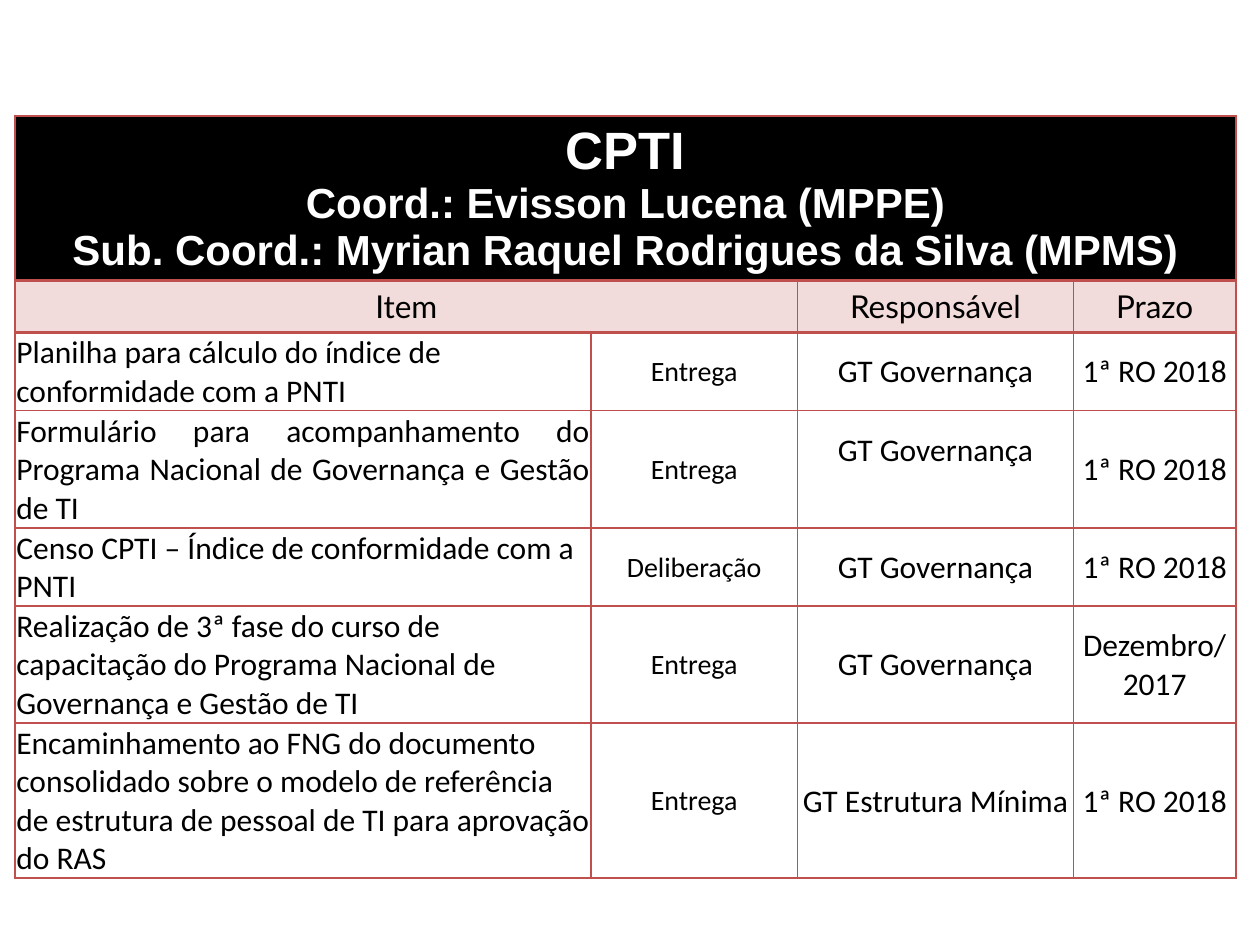
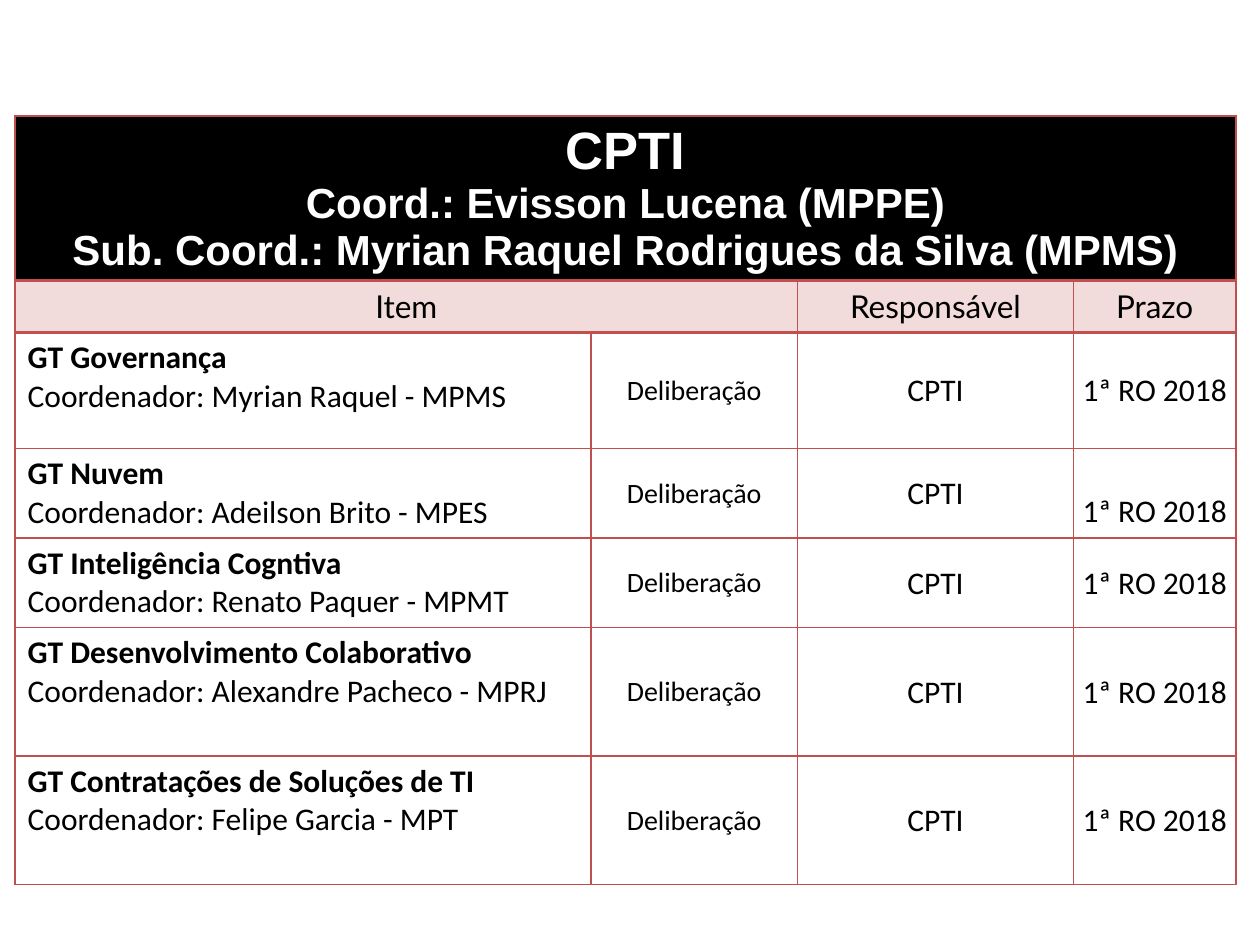
from lxml.etree import SubElement
from pptx import Presentation
from pptx.dml.color import RGBColor
from pptx.enum.text import MSO_ANCHOR, PP_ALIGN
from pptx.oxml.ns import qn
from pptx.util import Inches, Pt

BLACK, WHITE, RED, PINK = "000000", "FFFFFF", "C0504D", "F2DCDB"
COLUMNS = [4.57, 1.64, 2.19, 1.29]
TITLE_HEIGHT, HEADING_HEIGHT = 1.3, 0.41
LEFT, TOP = 0.12, 0.92
TIGHT, LINE = 0.01, 0.3
FIRST_MEETING = "1ª RO 2018"

title_lines = [
    ("CPTI", 30, True),
    ("Coord.: Evisson Lucena (MPPE)", 24, True),
    ("Sub. Coord.: Myrian Raquel Rodrigues da Silva (MPMS)", 24, True),
]
headings = {0: "Item", 2: "Responsável", 3: "Prazo"}

deliveries = [
    (0.62, ["Planilha para cálculo do índice de conformidade com a PNTI"],
     "Entrega", "GT Governança", FIRST_MEETING),
    (0.93, ["Formulário para acompanhamento do Programa Nacional de Governança e Gestão de TI"],
     "Entrega", "GT Governança", FIRST_MEETING),
    (0.62, ["Censo CPTI – Índice de conformidade com a PNTI"],
     "Deliberação", "GT Governança", FIRST_MEETING),
    (0.93, ["Realização de 3ª fase do curso de capacitação do Programa Nacional de Governança e Gestão de TI"],
     "Entrega", "GT Governança", "Dezembro/2017"),
    (1.23, ["Encaminhamento ao FNG do documento consolidado sobre o modelo de referência "
            "de estrutura de pessoal de TI para aprovação do RAS"],
     "Entrega", "GT Estrutura Mínima", FIRST_MEETING),
]
groups = [
    (0.92, "GT Governança", "Myrian Raquel - MPMS"),
    (0.71, "GT Nuvem", "Adeilson Brito - MPES"),
    (0.71, "GT Inteligência Cogntiva", "Renato Paquer - MPMT"),
    (1.02, "GT Desenvolvimento Colaborativo", "Alexandre Pacheco - MPRJ"),
    (1.02, "GT Contratações de Soluções de TI", "Felipe Garcia - MPT"),
]
deliberations = [
    (height, [group, f"Coordenador: {coordinator}"], "Deliberação", "CPTI", FIRST_MEETING)
    for height, group, coordinator in groups
]


def write(cell, lines, font, color, align):
    cell.text_frame.text = "\n".join(text for text, size, bold in lines)
    for para, (text, size, bold) in zip(cell.text_frame.paragraphs, lines):
        para.alignment = align
        for span in para.runs:
            span.font.name = font
            span.font.size = Pt(size)
            span.font.bold = bold
            span.font.color.rgb = RGBColor.from_string(color)


def paint(cell, fill, bottom=1, top=1):
    properties = cell._tc.get_or_add_tcPr()
    for side, width in (("L", 1), ("R", 1), ("T", top), ("B", bottom)):
        border = SubElement(properties, qn(f"a:ln{side}"), w=str(Pt(width)))
        SubElement(SubElement(border, qn("a:solidFill")), qn("a:srgbClr"), val=RED)
    if fill:
        cell.fill.solid()
        cell.fill.fore_color.rgb = RGBColor.from_string(fill)
    else:
        cell.fill.background()


deck = Presentation()
deck.slide_width, deck.slide_height = Inches(10), Inches(7.5)
tables = []

for items in (deliveries, deliberations):
    page = deck.slides.add_slide(deck.slide_layouts[6])
    heights = [TITLE_HEIGHT, HEADING_HEIGHT] + [item[0] for item in items]
    table = page.shapes.add_table(
        len(heights), len(COLUMNS), Inches(LEFT), Inches(TOP),
        Inches(sum(COLUMNS)), Inches(sum(heights))).table
    tables.append(table)
    table.first_row = table.horz_banding = False
    for column, width in zip(table.columns, COLUMNS):
        column.width = Inches(width)
    for row, height in zip(table.rows, heights):
        row.height = Inches(height)

    for index in range(len(COLUMNS)):
        paint(table.cell(0, index), BLACK, bottom=2)
        paint(table.cell(1, index), PINK, top=2)
    table.cell(0, 0).merge(table.cell(0, 3))
    table.cell(1, 0).merge(table.cell(1, 1))
    write(table.cell(0, 0), title_lines, "Arial", WHITE, PP_ALIGN.CENTER)
    for index, heading in headings.items():
        write(table.cell(1, index), [(heading, 18, False)], "Lato", BLACK, PP_ALIGN.CENTER)

    for row, (height, item, action, owner, deadline) in enumerate(items, 2):
        named_group = len(item) > 1
        item_lines = [(text, 18, named_group and text == item[0]) for text in item]
        write(table.cell(row, 0), item_lines, "Calibri", BLACK, PP_ALIGN.LEFT)
        for index, (text, size) in enumerate([(action, 16), (owner, 18), (deadline, 18)], 1):
            write(table.cell(row, index), [(text, size, False)], "Calibri", BLACK, PP_ALIGN.CENTER)
        for index in range(len(COLUMNS)):
            cell = table.cell(row, index)
            if index or not named_group:
                cell.vertical_anchor = MSO_ANCHOR.MIDDLE
                cell.margin_left = cell.margin_right = cell.margin_top = Inches(TIGHT)
                cell.margin_bottom = 0
            paint(cell, None, top=2 if row == 2 else 1)

delivery_table, group_table = tables
delivery_table.cell(3, 0).text_frame.paragraphs[0].alignment = PP_ALIGN.JUSTIFY
delivery_table.cell(3, 2).margin_bottom = Inches(LINE)
group_table.cell(3, 3).margin_top = Inches(LINE)

deck.save("out.pptx")
